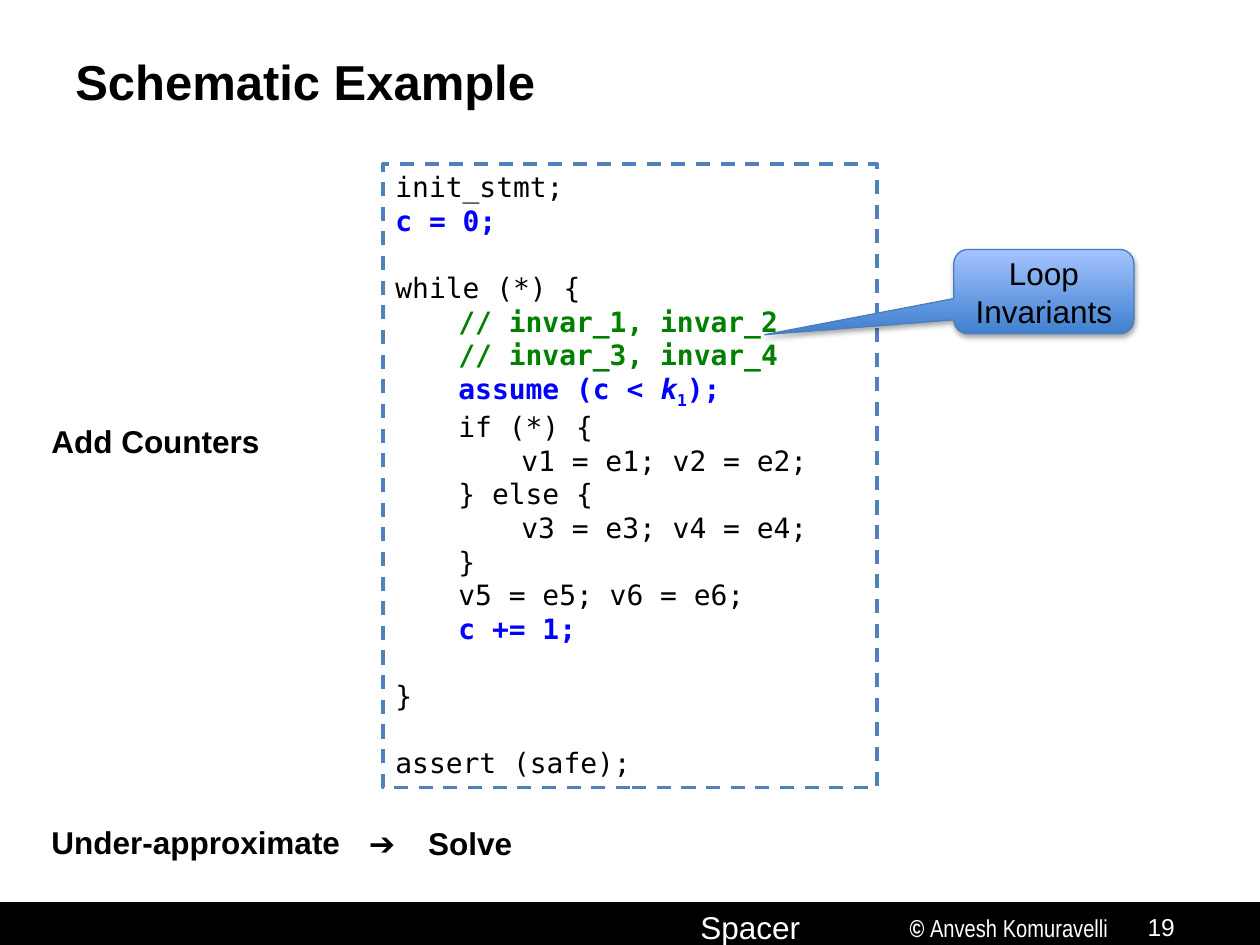
from lxml import etree
from pptx import Presentation
from pptx.dml.color import RGBColor
from pptx.enum.dml import MSO_LINE
from pptx.enum.shapes import MSO_SHAPE
from pptx.enum.text import MSO_ANCHOR, MSO_AUTO_SIZE, PP_ALIGN
from pptx.oxml.ns import qn
from pptx.util import Inches, Pt

RECT = MSO_SHAPE.RECTANGLE
CALLOUT = MSO_SHAPE.ROUNDED_RECTANGULAR_CALLOUT
DASH = MSO_LINE.DASH
TOP, MIDDLE = MSO_ANCHOR.TOP, MSO_ANCHOR.MIDDLE
LEFT, CENTER = PP_ALIGN.LEFT, PP_ALIGN.CENTER
GROW, FIXED = MSO_AUTO_SIZE.SHAPE_TO_FIT_TEXT, MSO_AUTO_SIZE.NONE

BLACK, WHITE = "000000", "FFFFFF"
CODE_FONT = "DejaVu Sans Mono"
CODE_LINE = Pt(19.2)
TAB = Inches(0.5)

PLAIN = {}
COUNTER = {"color": "0000FF", "bold": True}
INVARIANT = {"color": "008000", "bold": True}

# Each block is set off from the one before by an empty line's height.
CODE_BLOCKS = [
    [
        [("init_stmt;", PLAIN)],
        [("c = 0;", COUNTER)],
    ],
    [
        [("while (*) {", PLAIN)],
        [("\t// invar_1, invar_2", INVARIANT)],
        [("\t// invar_3, invar_4", INVARIANT)],
        [("\tassume (c < ", COUNTER), ("k", {**COUNTER, "italic": True}),
         ("1", {**COUNTER, "baseline": -25000}), (");", COUNTER)],
        [("\tif (*) {", PLAIN)],
        [("\t\tv1 = e1; v2 = e2;", PLAIN)],
        [("\t} else {", PLAIN)],
        [("\t\tv3 = e3; v4 = e4;", PLAIN)],
        [("\t}", PLAIN)],
        [("\tv5 = e5; v6 = e6;", PLAIN)],
        [("\tc += 1;", COUNTER)],
    ],
    [[("}", PLAIN)]],
    [[("assert (safe);", PLAIN)]],
]


def rgb(hex_color):
    return RGBColor.from_string(hex_color)


def style_run(run, size, font="Arial", color=BLACK, bold=False, italic=False, baseline=0):
    run.font.size = Pt(size)
    run.font.name = font
    run.font.color.rgb = rgb(color)
    run.font.bold = bold
    run.font.italic = italic
    if baseline:
        run.font._element.set("baseline", str(baseline))


def add_tab_stops(paragraph, count=2):
    stops = etree.SubElement(paragraph._p.get_or_add_pPr(), qn("a:tabLst"))
    for level in range(1, count + 1):
        etree.SubElement(stops, qn("a:tab"), pos=str(level * TAB), algn="l")


def add_soft_shadow(shape):
    shape.shadow.inherit = False
    effects = shape._element.spPr.find(qn("a:effectLst"))
    shadow = etree.SubElement(effects, qn("a:outerShdw"), blurRad=str(Pt(3.1)),
                              dist=str(Pt(1.8)), dir="5400000", rotWithShape="0")
    color = etree.SubElement(shadow, qn("a:srgbClr"), val=BLACK)
    etree.SubElement(color, qn("a:alpha"), val="35000")


class SlideBuilder:
    def __init__(self, slide):
        self.shapes = slide.shapes

    def label(self, text, left, top, width, height=0.4, size=18, **style):
        box = self.shapes.add_textbox(*map(Inches, (left, top, width, height)))
        frame = box.text_frame
        frame.word_wrap = False
        frame.auto_size = GROW
        self.fill_text(frame, text, size, **style)
        return box

    def box(self, left, top, width, height, fill=BLACK, line=None, line_width=1, kind=RECT):
        shape = self.shapes.add_shape(kind, *map(Inches, (left, top, width, height)))
        shape.shadow.inherit = False
        shape.fill.solid()
        shape.fill.fore_color.rgb = rgb(fill)
        if line:
            shape.line.color.rgb = rgb(line)
            shape.line.width = Pt(line_width)
        else:
            shape.line.fill.background()
        return shape

    def fill_text(self, frame, text, size, align=LEFT, anchor=TOP, **style):
        frame.vertical_anchor = anchor
        paragraph = frame.paragraphs[0]
        paragraph.text = text
        paragraph.alignment = align
        style_run(paragraph.runs[0], size, **style)

    def code(self, shape, blocks):
        frame = shape.text_frame
        frame.word_wrap = False
        frame.auto_size = GROW
        frame.vertical_anchor = TOP
        paragraph = frame.paragraphs[0]
        for block_index, block in enumerate(blocks):
            for line_index, line in enumerate(block):
                if block_index or line_index:
                    paragraph = frame.add_paragraph()
                add_tab_stops(paragraph)
                paragraph.alignment = LEFT
                if block_index and not line_index:
                    paragraph.space_before = CODE_LINE
                for text, style in line:
                    run = paragraph.add_run()
                    run.text = text
                    style_run(run, 16, CODE_FONT, **style)

    def callout(self, text, left, top, width, height, adjustments):
        shape = self.box(left, top, width, height, line="4B7EBC", line_width=0.75, kind=CALLOUT)
        for index, value in enumerate(adjustments):
            shape.adjustments[index] = value
        shape.fill.gradient()
        shape.fill.gradient_angle = 90
        for stop, color, position in zip(shape.fill.gradient_stops, ("3F80CE", "A4C4FF"), (0, 1)):
            stop.color.rgb = rgb(color)
            stop.position = position
        add_soft_shadow(shape)
        shape.text_frame.word_wrap = True
        self.fill_text(shape.text_frame, text, 18, CENTER, MIDDLE)


def main():
    deck = Presentation()
    deck.slide_width, deck.slide_height = Inches(10), Inches(7.5)
    page = SlideBuilder(deck.slides.add_slide(deck.slide_layouts[6]))

    page.box(0, 7.16, 10, 0.38)
    copyright_line = page.box(7.17, 7.19, 2.06, 0.34, line=BLACK, line_width=2).text_frame
    copyright_line.margin_left = copyright_line.margin_right = Inches(0.05)
    copyright_line.margin_top = copyright_line.margin_bottom = Inches(0.05)
    footer_style = {"font": "Arial Narrow", "color": WHITE}
    page.fill_text(copyright_line, "© ", 14, anchor=MIDDLE, bold=True, **footer_style)
    author = copyright_line.paragraphs[0].add_run()
    author.text = "Anvesh Komuravelli"
    style_run(author, 14, **footer_style)
    page.label("Spacer", 5.46, 7.16, 1.52, color=WHITE)

    title = page.label("Schematic Example", 0.5, 0.3, 9, 0.69, 28, anchor=MIDDLE, bold=True)
    title.text_frame.word_wrap = True
    title.text_frame.auto_size = FIXED

    program = page.box(3.04, 1.3, 3.92, 4.95, WHITE, "4F81BD", 2)
    program.line.dash_style = DASH
    page.code(program, CODE_BLOCKS)

    page.label("Add Counters", 0.31, 3.3, 1.87, bold=True)
    page.label("Under-approximate", 0.31, 6.48, 2.52, bold=True)
    page.label("Solve", 3.3, 6.49, 0.88, bold=True)
    page.label("➔", 2.83, 6.49, 0.47)

    page.callout("Loop Invariants", 7.57, 1.98, 1.43, 0.67, (-1.55, 0.51, 0.17))

    slide_number = page.box(9.01, 7.19, 0.5, 0.29, line=BLACK, line_width=0.75)
    page.fill_text(slide_number.text_frame, "19", 14, color=WHITE)

    deck.save("out.pptx")


if __name__ == "__main__":
    main()
